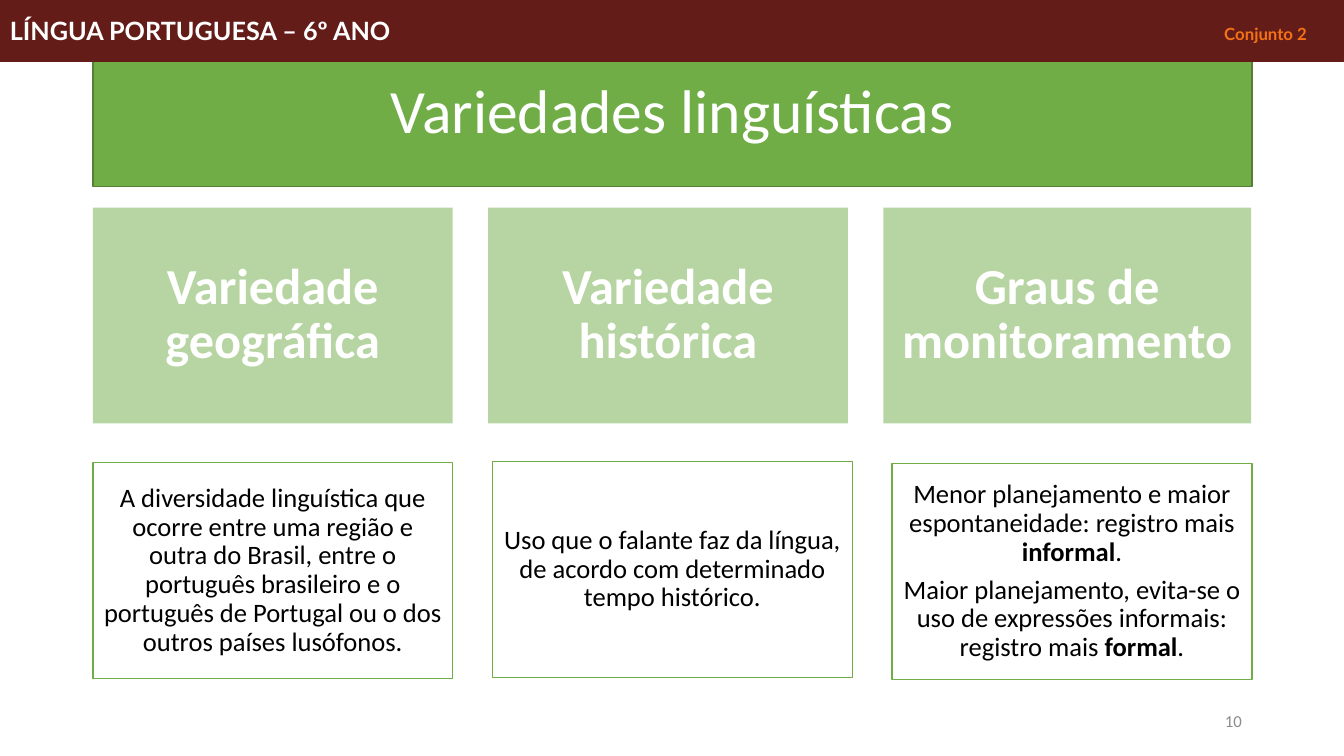
"""Builds the slide on linguistic varieties: title, three headings and their definitions."""
from dataclasses import dataclass

from lxml import etree
from pptx import Presentation
from pptx.dml.color import RGBColor
from pptx.enum.shapes import MSO_SHAPE
from pptx.enum.text import MSO_ANCHOR, MSO_AUTO_SIZE, PP_ALIGN
from pptx.oxml.ns import qn
from pptx.util import Cm, Pt

RECT = MSO_SHAPE.RECTANGLE
MIDDLE = MSO_ANCHOR.MIDDLE
NO_FIT = MSO_AUTO_SIZE.NONE
LEFT, CENTER, RIGHT = PP_ALIGN.LEFT, PP_ALIGN.CENTER, PP_ALIGN.RIGHT
GREEN, WHITE, BLACK, MAROON = "70AD47", "FFFFFF", "000000", "631C18"
SLIDE_W, SLIDE_H = 33.87, 19.05
MARGIN = 2.34
CARD_W, CARD_H = 9.07, 5.44
HEADING_TOP, HEADING_STEP = 5.23, 9.96
DEFINITION_STEP = 10.07


@dataclass
class Run:
    text: str
    size: float
    color: str = BLACK
    bold: bool = False
    font: str = "Calibri"


@dataclass
class Variety:
    heading: str
    heading_width: float
    definition_top: float
    definition: list[list[Run]]


def body(text: str, bold: bool = False) -> Run:
    return Run(text, 19, bold=bold)


VARIETIES = [
    Variety("Variedade geográfica", CARD_W, 11.66, [[body(
        "A diversidade linguística que ocorre entre uma região e outra do Brasil, "
        "entre o português brasileiro e o português de Portugal ou o dos outros "
        "países lusófonos.")]]),
    Variety("Variedade histórica", CARD_W, 11.63, [[body(
        "Uso que o falante faz da língua, de acordo com determinado tempo histórico.")]]),
    Variety("Graus de monitoramento", 9.27, 11.68, [
        [body("Menor planejamento e maior espontaneidade: registro mais "),
         body("informal", True), body(".")],
        [body("Maior planejamento, evita-se o uso de expressões informais: registro mais "),
         body("formal", True), body(".")],
    ]),
]


def rgb(color: str) -> RGBColor:
    return RGBColor.from_string(color)


def paint(sp, fill: str, line: str | None = None, width: float = 1) -> None:
    sp.fill.solid()
    sp.fill.fore_color.rgb = rgb(fill)
    if line:
        sp.line.color.rgb = rgb(line)
        sp.line.width = Pt(width)
    else:
        sp.line.fill.background()


def add_rect(s, left: float, top: float, width: float, height: float):
    sp = s.shapes.add_shape(RECT, Cm(left), Cm(top), Cm(width), Cm(height))
    sp.shadow.inherit = False
    return sp


def write(tf, paragraphs: list[list[Run]], align: PP_ALIGN = CENTER,
          inset: float | None = None, spacing: float = 1, after: float = 0) -> None:
    tf.word_wrap = True
    tf.auto_size = NO_FIT
    tf.vertical_anchor = MIDDLE
    if inset is not None:
        tf.margin_left = tf.margin_right = tf.margin_top = tf.margin_bottom = Cm(inset)
    for i, runs in enumerate(paragraphs):
        p = tf.add_paragraph() if i else tf.paragraphs[0]
        p.alignment = align
        p.line_spacing = spacing
        p.space_after = Pt(after)
        for run in runs:
            r = p.add_run()
            r.text = run.text
            r.font.name = run.font
            r.font.size = Pt(run.size)
            r.font.bold = run.bold
            r.font.color.rgb = rgb(run.color)


def set_alpha(sp, percent: int) -> None:
    color = sp.fill._xPr.find(qn("a:solidFill"))[0]
    etree.SubElement(color, qn("a:alpha"), val=str(percent * 1000))


def add_title(s) -> None:
    title = s.shapes.title
    title.left, title.top = Cm(MARGIN), Cm(1.02)
    title.width, title.height = Cm(29.21), Cm(3.68)
    paint(title, GREEN, "538035")
    write(title.text_frame, [[Run("Variedades linguísticas", 44, WHITE)]], spacing=0.9)


def add_variety(s, i: int, variety: Variety) -> None:
    heading = add_rect(s, MARGIN + i * HEADING_STEP, HEADING_TOP,
                       variety.heading_width, CARD_H)
    paint(heading, GREEN)
    set_alpha(heading, 50)
    write(heading.text_frame, [[Run(variety.heading, 36, WHITE, True)]],
          inset=0.38, spacing=0.9, after=12.6)
    definition = add_rect(s, MARGIN + i * DEFINITION_STEP, variety.definition_top,
                          CARD_W, CARD_H)
    paint(definition, WHITE, GREEN)
    write(definition.text_frame, variety.definition, inset=0.2, spacing=0.9, after=6.65)


def add_header(s) -> None:
    header = add_rect(s, 0, 0, SLIDE_W, 1.55)
    paint(header, MAROON, MAROON, 0.75)
    tf = header.text_frame
    write(tf, [[Run("LÍNGUA PORTUGUESA – 6º ANO\t", 18, WHITE, True, "Lato"),
                Run("Conjunto 2", 12, "F47116", True, "Lato")]], LEFT)
    tabs = etree.SubElement(tf.paragraphs[0]._p.get_or_add_pPr(), qn("a:tabLst"))
    etree.SubElement(tabs, qn("a:tab"), pos=str(Cm(32.69)), algn="r")


def main() -> None:
    prs = Presentation()
    prs.slide_width, prs.slide_height = Cm(SLIDE_W), Cm(SLIDE_H)
    s = prs.slides.add_slide(prs.slide_layouts[5])
    add_title(s)
    for i, variety in enumerate(VARIETIES):
        add_variety(s, i, variety)
    number = s.shapes.add_textbox(Cm(23.93), Cm(17.65), Cm(7.62), Cm(1.02))
    write(number.text_frame, [[Run("10", 12, "8C8C8C")]], RIGHT)
    add_header(s)
    prs.save("out.pptx")


if __name__ == "__main__":
    main()
